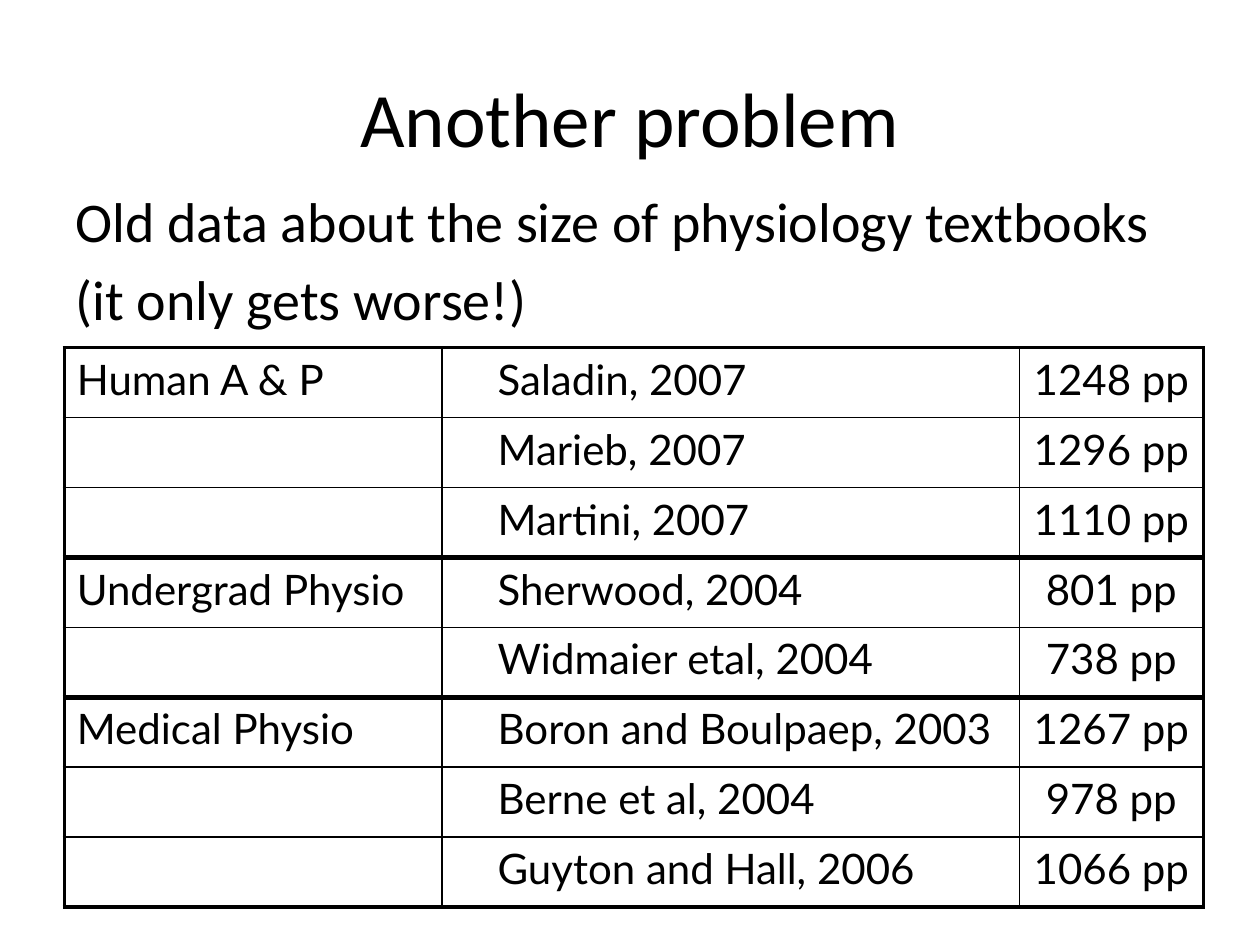
from lxml.etree import SubElement
from pptx import Presentation
from pptx.dml.color import RGBColor
from pptx.enum.text import MSO_ANCHOR, PP_ALIGN
from pptx.oxml.ns import qn
from pptx.util import Inches, Pt

BLACK = RGBColor(0x00, 0x00, 0x00)
THIN, OUTER, GROUP = 1, 2.25, 3


def add_text(paragraph, text, size, font_name):
    run = paragraph.add_run()
    run.text = text
    run.font.size = Pt(size)
    run.font.name = font_name
    run.font.color.rgb = BLACK


def set_border(cell, side, width):
    line = SubElement(cell._tc.get_or_add_tcPr(), qn(f"a:ln{side}"), w=str(Pt(width)))
    fill = SubElement(line, qn("a:solidFill"))
    SubElement(fill, qn("a:srgbClr"), val=str(BLACK))


presentation = Presentation()
presentation.slide_width = Inches(10)
presentation.slide_height = Inches(7.5)
slide = presentation.slides.add_slide(presentation.slide_layouts[1])

title = slide.shapes.title
title.left, title.top = Inches(0.5), Inches(0.3)
title.width, title.height = Inches(9), Inches(1.25)
title.text_frame.vertical_anchor = MSO_ANCHOR.MIDDLE
title_paragraph = title.text_frame.paragraphs[0]
title_paragraph.alignment = PP_ALIGN.CENTER
add_text(title_paragraph, "Another problem", 44, "Calibri")

body = slide.placeholders[1]
body.left, body.top = Inches(0.5), Inches(1.43)
body.width, body.height = Inches(9), Inches(5.27)
body_lines = ["Old data about the size of physiology textbooks", "(it only gets worse!)"]
for index, text in enumerate(body_lines):
    frame = body.text_frame
    paragraph = frame.add_paragraph() if index else frame.paragraphs[0]
    properties = paragraph._p.get_or_add_pPr()
    properties.set("marL", "0")
    properties.set("indent", "0")
    SubElement(properties, qn("a:buNone"))
    add_text(paragraph, text, 32, "Calibri")

textbook_groups = [
    ("Human A & P", [("Saladin, 2007", 1248), ("Marieb, 2007", 1296), ("Martini, 2007", 1110)]),
    ("Undergrad Physio", [("Sherwood, 2004", 801), ("Widmaier etal, 2004", 738)]),
    ("Medical Physio", [("Boron and Boulpaep, 2003", 1267), ("Berne et al, 2004", 978),
                        ("Guyton and Hall, 2006", 1066)]),
]
rows = []
group_starts = []
for course, books in textbook_groups:
    group_starts.append(len(rows))
    for index, (book, pages) in enumerate(books):
        rows.append(("" if index else course, book, f"{pages} pp"))

column_widths = [3, 4.58, 1.46]
row_count, column_count = len(rows), len(column_widths)
edge_widths = [GROUP if row in group_starts else THIN for row in range(row_count + 1)]
edge_widths[0] = edge_widths[-1] = OUTER

table = slide.shapes.add_table(
    row_count, column_count, Inches(0.51), Inches(2.76), Inches(9.04), Inches(4.44)
).table
table.first_row = False
table.horz_banding = False
for column, width in zip(table.columns, column_widths):
    column.width = Inches(width)

for row, values in enumerate(rows):
    for column, text in enumerate(values):
        cell = table.cell(row, column)
        set_border(cell, "L", OUTER if column == 0 else THIN)
        set_border(cell, "R", OUTER if column == column_count - 1 else THIN)
        set_border(cell, "T", edge_widths[row])
        set_border(cell, "B", edge_widths[row + 1])
        cell.fill.background()
        paragraph = cell.text_frame.paragraphs[0]
        paragraph.font.size = Pt(24)
        if column == 1:
            cell.margin_left = Inches(0.44)
        if column == 2:
            paragraph.alignment = PP_ALIGN.CENTER
        if text:
            add_text(paragraph, text, 24, "Lato")

presentation.save("out.pptx")
